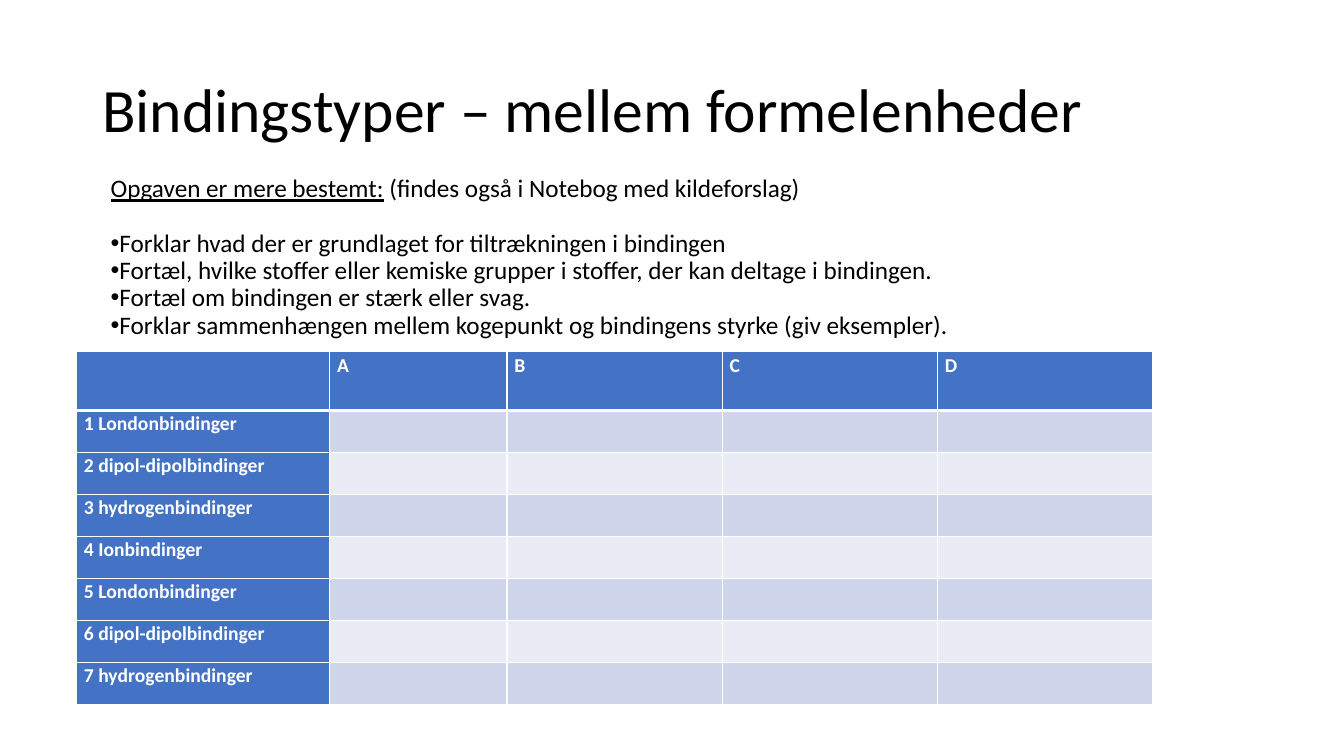
import pptx
import pptx.dml.color
import pptx.enum.text
import pptx.oxml.ns
import pptx.util
import lxml.etree

PX = 9525
FONT = "Calibri"
COLORS = {
    "paper": "FFFFFF",
    "ink": "000000",
    "header": "4472C4",
    "band_dark": "CFD5EA",
    "band_light": "E9EBF5",
}
TITLE = "Bindingstyper – mellem formelenheder"
TASK = "Opgaven er mere bestemt:"
TASK_NOTE = " (findes også i Notebog med kildeforslag)"
QUESTIONS = [
    "Forklar hvad der er grundlaget for tiltrækningen i bindingen",
    "Fortæl, hvilke stoffer eller kemiske grupper i stoffer, der kan deltage i bindingen.",
    "Fortæl om bindingen er stærk eller svag.",
    "Forklar sammenhængen mellem kogepunkt og bindingens styrke (giv eksempler).",
]
GROUPS = ["", "A", "B", "C", "D"]
BONDS = [
    "1 Londonbindinger",
    "2 dipol-dipolbindinger",
    "3 hydrogenbindinger",
    "4 Ionbindinger",
    "5 Londonbindinger",
    "6 dipol-dipolbindinger",
    "7 hydrogenbindinger",
]
COLUMN_WIDTHS = [241, 169, 205, 205, 205]
HEADER_HEIGHT = 56
ROW_HEIGHT = 40


def px(length):
    """Turn whole px into EMU."""
    return pptx.util.Emu(length * PX)


def rgb(name):
    """Look up a named colour."""
    return pptx.dml.color.RGBColor.from_string(COLORS[name])


def add_text(paragraph, text, size=18, color="ink", bold=False, underline=False,
             line_spacing=0.9, space_before=0, space_after=0):
    """Add a formatted run and set the spacing of its paragraph."""
    paragraph.line_spacing = line_spacing
    paragraph.space_before = pptx.util.Pt(space_before)
    paragraph.space_after = pptx.util.Pt(space_after)
    run = paragraph.add_run()
    run.text = text
    run.font.name = FONT
    run.font.size = pptx.util.Pt(size)
    run.font.bold = bold
    run.font.underline = underline
    run.font.color.rgb = rgb(color)


def add_bullet(paragraph):
    """Give a paragraph a round bullet placed tight against its text."""
    properties = paragraph._p.get_or_add_pPr()
    properties.set("marL", "0")
    properties.set("indent", str(-px(24)))
    font = lxml.etree.SubElement(properties, pptx.oxml.ns.qn("a:buFont"))
    font.set("typeface", "Arial")
    bullet = lxml.etree.SubElement(properties, pptx.oxml.ns.qn("a:buChar"))
    bullet.set("char", "•")


def add_box(slide, left, top, width, height, anchor):
    """Add a wrapping text box and return its text frame."""
    shape = slide.shapes.add_textbox(px(left), px(top), px(width), px(height))
    frame = shape.text_frame
    frame.word_wrap = True
    frame.vertical_anchor = anchor
    return frame


def set_borders(cell, top, bottom):
    """Draw white cell borders, with top and bottom widths in points."""
    properties = cell._tc.get_or_add_tcPr()
    sides = {"lnL": 1, "lnR": 1, "lnT": top, "lnB": bottom}
    for position, (side, width) in enumerate(sides.items()):
        line = lxml.etree.Element(pptx.oxml.ns.qn(f"a:{side}"))
        line.set("w", str(pptx.util.Pt(width)))
        fill = lxml.etree.SubElement(line, pptx.oxml.ns.qn("a:solidFill"))
        color = lxml.etree.SubElement(fill, pptx.oxml.ns.qn("a:srgbClr"))
        color.set("val", COLORS["paper"])
        properties.insert(position, line)


def add_title(slide, left, top, width, height):
    """Place the slide title."""
    frame = add_box(slide, left, top, width, height, pptx.enum.text.MSO_ANCHOR.MIDDLE)
    add_text(frame.paragraphs[0], TITLE, size=44)


def add_task(slide, left, top, width, height):
    """Place the task heading and its questions."""
    frame = add_box(slide, left, top, width, height, pptx.enum.text.MSO_ANCHOR.TOP)
    heading = frame.paragraphs[0]
    add_text(heading, TASK, underline=True)
    add_text(heading, TASK_NOTE)
    for index, question in enumerate(QUESTIONS):
        paragraph = frame.add_paragraph()
        add_bullet(paragraph)
        add_text(paragraph, question, space_before=0 if index else 19.5)


def add_bond_table(slide, left, top):
    """Place the table of bond types against groups."""
    rows = [GROUPS] + [[bond] + [""] * (len(GROUPS) - 1) for bond in BONDS]
    heights = [HEADER_HEIGHT] + [ROW_HEIGHT] * len(BONDS)
    table = slide.shapes.add_table(
        len(rows), len(GROUPS), px(left), px(top),
        px(sum(COLUMN_WIDTHS)), px(sum(heights))).table
    table.first_col = True
    for column, width in zip(table.columns, COLUMN_WIDTHS):
        column.width = px(width)
    for row_index, texts in enumerate(rows):
        table.rows[row_index].height = px(heights[row_index])
        band = "band_dark" if row_index % 2 else "band_light"
        for column_index, text in enumerate(texts):
            cell = table.cell(row_index, column_index)
            cell.margin_left = cell.margin_right = px(7)
            cell.margin_top = cell.margin_bottom = 0
            is_header = row_index == 0 or column_index == 0
            cell.fill.solid()
            cell.fill.fore_color.rgb = rgb("header" if is_header else band)
            set_borders(cell, top=3 if row_index == 1 else 1,
                        bottom=3 if row_index == 0 else 1)
            if text:
                add_text(cell.text_frame.paragraphs[0], text, size=14, color="paper",
                         bold=True, line_spacing=1.07, space_after=8)


def main():
    """Build and save the presentation."""
    presentation = pptx.Presentation()
    presentation.slide_width = px(1280)
    presentation.slide_height = px(720)
    slide = presentation.slides.add_slide(presentation.slide_layouts[6])
    add_bond_table(slide, 73, 335)
    add_title(slide, 88, 38, 1104, 139)
    add_task(slide, 96, 163, 1088, 442)
    presentation.save("out.pptx")


if __name__ == "__main__":
    main()
